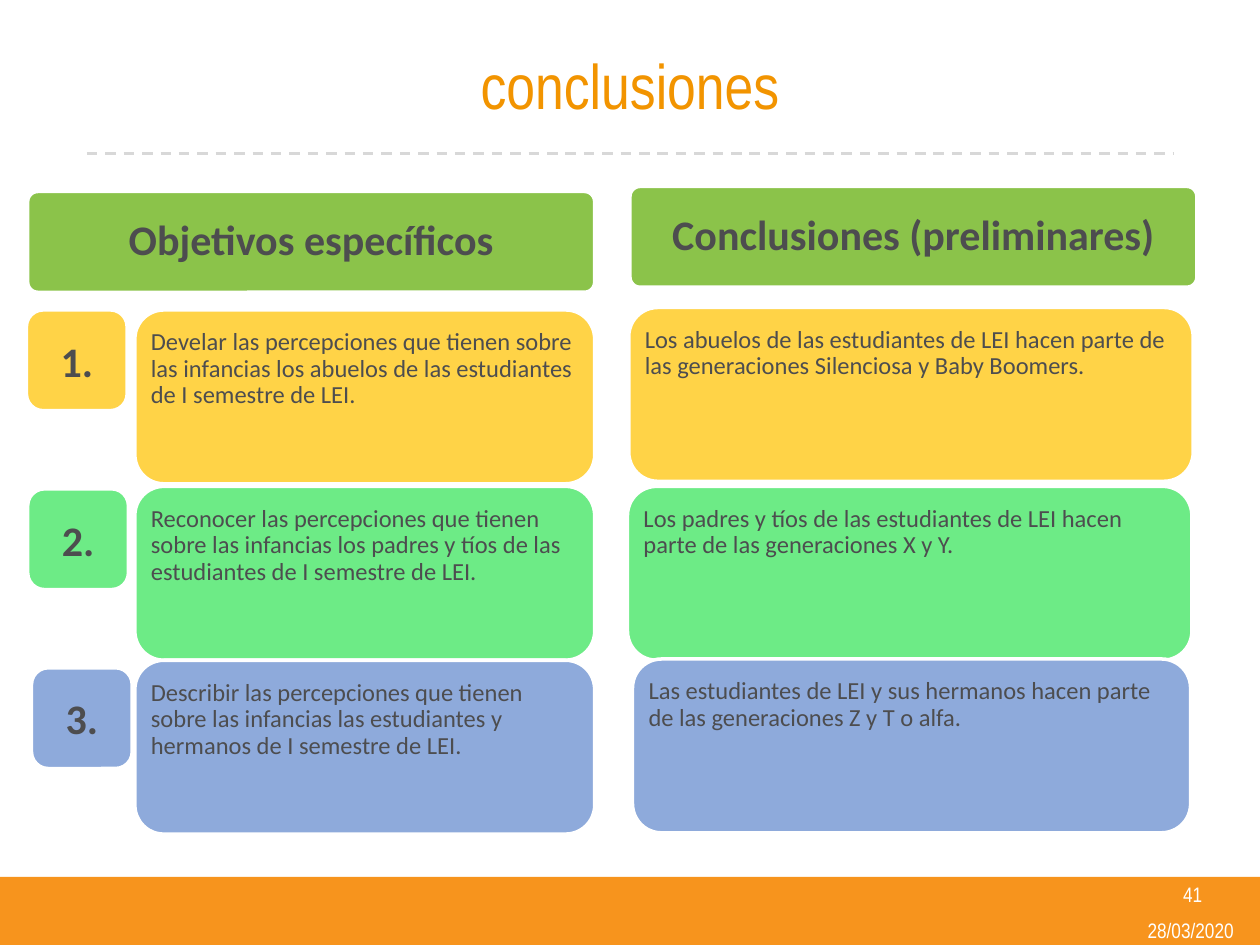
from dataclasses import dataclass

import pptx
import pptx.dml.color
import pptx.enum.dml
import pptx.enum.shapes
import pptx.enum.text
import pptx.oxml.ns
import pptx.util
from lxml import etree

KIND = pptx.enum.shapes.MSO_SHAPE
ALIGN = pptx.enum.text.PP_ALIGN
ANCHOR = pptx.enum.text.MSO_ANCHOR
COLS, ROWS = 100, 75


@dataclass(frozen=True)
class Theme:
    head: str = "Arial Narrow"
    body: str = "Calibri"
    title: str = "F29400"
    bar: str = "F7941D"
    rule: str = "D8D8D8"
    green: str = "8BC34A"
    ink: str = "4D4D4F"
    white: str = "FFFFFF"
    big: int = 36
    mid: int = 24
    text: int = 14
    small: int = 12


@dataclass(frozen=True)
class Box:
    col: float
    row: float
    wide: float
    high: float


@dataclass(frozen=True)
class Style:
    font: str
    size: int
    tone: str
    bold: bool = False
    align: int = ALIGN.CENTER
    anchor: int = ANCHOR.MIDDLE
    pad: tuple = (0.1, 0.05)
    lead: float = 1.0


@dataclass(frozen=True)
class Row:
    mark: str
    tone: str
    badge: tuple
    goal_top: float
    goal: str
    end: Box
    found: str


THEME = Theme()
TITLE = Style(THEME.head, THEME.big, THEME.title)
FOOT = Style(THEME.head, THEME.small, THEME.white)
HEAD = Style(THEME.body, THEME.mid, THEME.ink, True, pad=(0.03, 0.02), lead=0.9)
BADGE = Style(THEME.body, THEME.mid, THEME.ink, True)
CARD = Style(THEME.body, THEME.text, THEME.ink, align=ALIGN.LEFT,
             anchor=ANCHOR.TOP, pad=(0.06, 0.09), lead=0.9)

CARD_HIGH = 13.8
TABS = [
    (Box(2.2, 15.2, 45, 8), "Objetivos específicos"),
    (Box(50, 14.8, 45, 8), "Conclusiones (preliminares)"),
]
LIST = [
    Row("1.", "FFD347", (2.1, 24.6), 24.6,
        "Develar las percepciones que tienen sobre las infancias los abuelos "
        "de las estudiantes de I semestre de LEI.",
        Box(49.9, 24.4, 44.8, CARD_HIGH),
        "Los abuelos de las estudiantes de LEI hacen parte de las "
        "generaciones Silenciosa y Baby Boomers."),
    Row("2.", "6DEB86", (2.2, 38.8), 38.6,
        "Reconocer las percepciones que tienen sobre las infancias los padres "
        "y tíos de las estudiantes de I semestre de LEI.",
        Box(49.8, 38.6, 44.8, CARD_HIGH),
        "Los padres y tíos de las estudiantes de LEI hacen parte de las "
        "generaciones X y Y."),
    Row("3.", "8EAADB", (2.5, 53), 52.4,
        "Describir las percepciones que tienen sobre las infancias las "
        "estudiantes y hermanos de I semestre de LEI.",
        Box(50.2, 52.3, 44.3, CARD_HIGH),
        "Las estudiantes de LEI y sus hermanos hacen parte de las "
        "generaciones Z y T o alfa."),
]

deck = pptx.Presentation()
deck.slide_width = pptx.util.Inches(10)
deck.slide_height = pptx.util.Inches(7.5)
slide = deck.slides.add_slide(deck.slide_layouts[5])


def across(cols: float) -> int:
    return round(deck.slide_width * cols / COLS)


def down(rows: float) -> int:
    return round(deck.slide_height * rows / ROWS)


def place(box: Box) -> tuple:
    return across(box.col), down(box.row), across(box.wide), down(box.high)


def color(code: str) -> pptx.dml.color.RGBColor:
    return pptx.dml.color.RGBColor.from_string(code)


def write(shape, words: str, style: Style) -> None:
    frame = shape.text_frame
    frame.word_wrap = True
    frame.auto_size = pptx.enum.text.MSO_AUTO_SIZE.NONE
    frame.vertical_anchor = style.anchor
    side, edge = map(pptx.util.Inches, style.pad)
    frame.margin_left = frame.margin_right = side
    frame.margin_top = frame.margin_bottom = edge
    para = frame.paragraphs[0]
    para.alignment = style.align
    para.line_spacing = style.lead
    run = para.add_run()
    run.text = words
    run.font.name = style.font
    run.font.size = pptx.util.Pt(style.size)
    run.font.bold = style.bold
    run.font.color.rgb = color(style.tone)


def draw_bar(box: Box) -> None:
    bar = slide.shapes.add_shape(KIND.RECTANGLE, *place(box))
    bar.shadow.inherit = False
    bar.fill.solid()
    bar.fill.fore_color.rgb = color(THEME.bar)
    bar.line.fill.background()


def draw_rule(left: float, right: float, row: float) -> None:
    rule = slide.shapes.add_connector(
        pptx.enum.shapes.MSO_CONNECTOR.STRAIGHT,
        across(left), down(row), across(right), down(row))
    rule.line.color.rgb = color(THEME.rule)
    rule.line.width = pptx.util.Pt(1.5)
    rule.line.dash_style = pptx.enum.dml.MSO_LINE.DASH
    props = rule._element.spPr
    etree.SubElement(props, pptx.oxml.ns.qn("a:effectLst"))


def draw_card(box: Box, tone: str, words: str, style: Style,
              bend: float = 0.167) -> None:
    card = slide.shapes.add_shape(KIND.ROUNDED_RECTANGLE, *place(box))
    card.adjustments[0] = bend
    card.shadow.inherit = False
    card.fill.solid()
    card.fill.fore_color.rgb = color(tone)
    card.line.color.rgb = color(THEME.white)
    card.line.width = pptx.util.Pt(2)
    write(card, words, style)


def draw_note(box: Box, words: str) -> None:
    write(slide.shapes.add_textbox(*place(box)), words, FOOT)


def main() -> None:
    draw_bar(Box(0, 69.6, COLS, 5.4))
    draw_note(Box(89.2, 72.8, 10.6, 2.1), "28/03/2020")
    draw_note(Box(89.4, 69.5, 10.5, 3), "41")
    draw_rule(6.9, 93.1, 12.2)
    title = slide.shapes.title
    title.left, title.top, title.width, title.height = place(
        Box(6.9, 1.3, 86.2, 10.8))
    write(title, "conclusiones", TITLE)
    for box, words in TABS:
        draw_card(box, THEME.green, words, HEAD, 0.1)
    for row in LIST:
        draw_card(Box(*row.badge, 8, 8), row.tone, row.mark, BADGE)
        draw_card(Box(10.7, row.goal_top, 36.5, CARD_HIGH),
                  row.tone, row.goal, CARD)
        draw_card(row.end, row.tone, row.found, CARD)
    deck.save("out.pptx")


if __name__ == "__main__":
    main()
